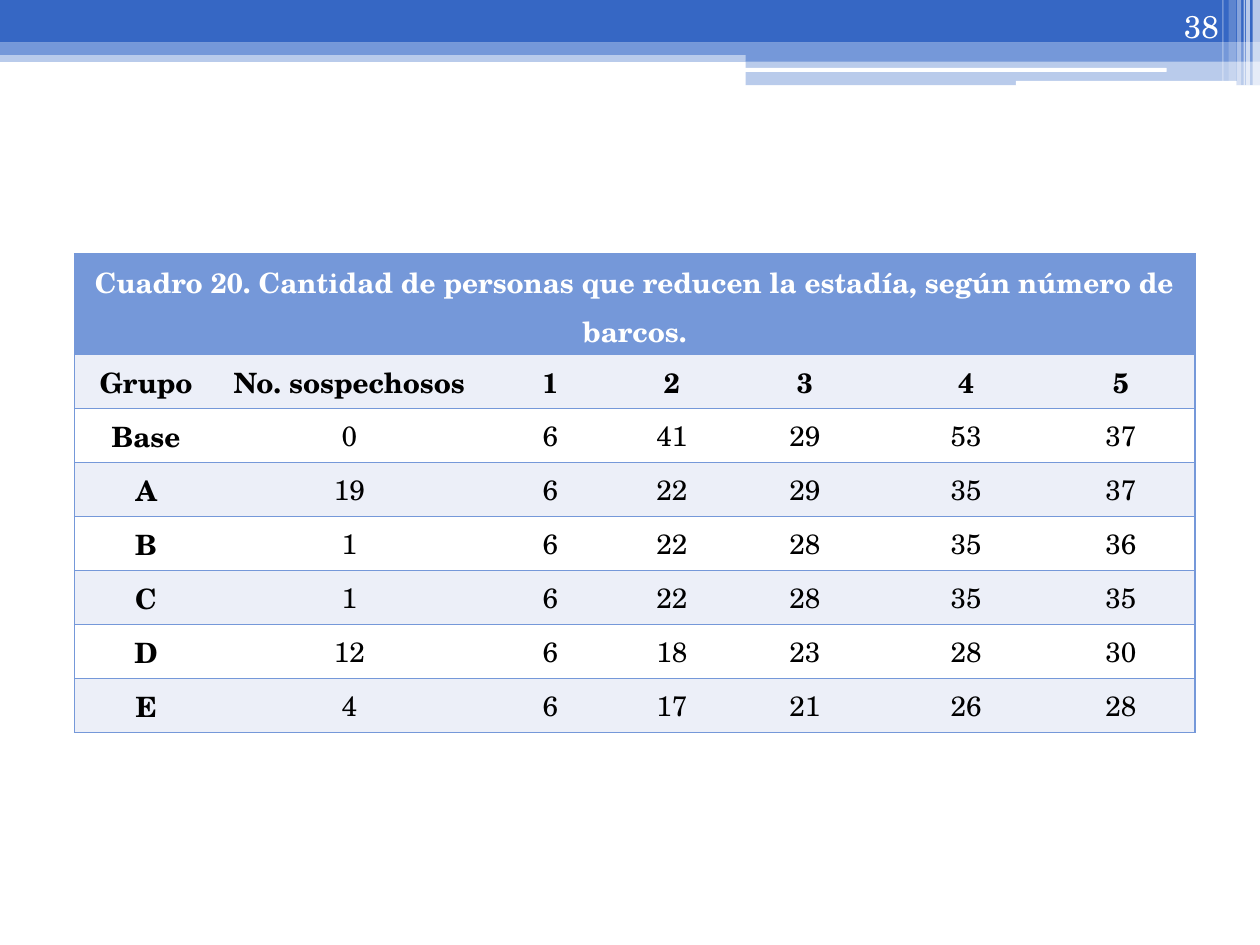
from dataclasses import dataclass

from lxml.etree import SubElement
from pptx import Presentation
from pptx.dml.color import RGBColor
from pptx.enum.shapes import MSO_SHAPE
from pptx.enum.text import MSO_ANCHOR, PP_ALIGN
from pptx.oxml import parse_xml
from pptx.oxml.ns import nsdecls, qn
from pptx.util import Cm, Pt

COLORS = {
    "deep": "3667C4",
    "blue": "7598D9",
    "band": "ECEFF8",
    "white": "FFFFFF",
    "black": "000000",
}
FONT = "TeX Gyre Schola"
TITLE = "Cuadro 20. Cantidad de personas que reducen la estadía, según número de barcos."
ROWS = [
    ("Grupo", "No. sospechosos", "1", "2", "3", "4", "5"),
    ("Base", "0", "6", "41", "29", "53", "37"),
    ("A", "19", "6", "22", "29", "35", "37"),
    ("B", "1", "6", "22", "28", "35", "36"),
    ("C", "1", "6", "22", "28", "35", "35"),
    ("D", "12", "6", "18", "23", "28", "30"),
    ("E", "4", "6", "17", "21", "26", "28"),
]
COLUMN_WIDTHS = (2.89, 5.31, 2.79, 2.11, 3.25, 3.25, 2.99)
ROW_HEIGHTS = (2.02,) + (1.09,) * len(ROWS)


@dataclass(frozen=True)
class Bar:
    left: float
    top: float
    width: float
    height: float
    color: str = "white"
    opacity: int = 100
    rounded: bool = False


BARS = [
    Bar(0, 1.02, 25.4, 0.23, "blue", 50),
    Bar(0, 0, 25.4, 0.86, "deep"),
    Bar(0, 0.86, 25.4, 0.25, "blue"),
    Bar(15.03, 0.99, 10.37, 0.25, "blue"),
    Bar(15.03, 1.22, 10.37, 0.5, "blue", 50),
    Bar(15.01, 1.37, 8.51, 0.08, rounded=True),
    Bar(20.48, 1.63, 4.45, 0.1, rounded=True),
    Bar(25.25, 0, 0.15, 1.73, opacity=65),
    Bar(25.12, 0, 0.08, 1.73, opacity=65),
    Bar(25.07, 0, 0.03, 1.73, opacity=60),
    Bar(24.94, 0, 0.08, 1.73, opacity=40),
    Bar(24.77, 0, 0.15, 1.63, opacity=20),
    Bar(24.64, 0, 0.03, 1.63, opacity=30),
]


def rgb(name: str) -> RGBColor:
    """Return a named colour."""
    return RGBColor.from_string(COLORS[name])


def draw_bar(slide, bar: Bar) -> None:
    """Draw one bar of the header."""
    kind = MSO_SHAPE.ROUNDED_RECTANGLE if bar.rounded else MSO_SHAPE.RECTANGLE
    shape = slide.shapes.add_shape(
        kind, Cm(bar.left), Cm(bar.top), Cm(bar.width), Cm(bar.height)
    )
    shape.shadow.inherit = False
    shape.line.fill.background()
    shape.fill.solid()
    shape.fill.fore_color.rgb = rgb(bar.color)
    if bar.opacity < 100:
        color = next(shape.element.spPr.iter(qn("a:srgbClr")))
        SubElement(color, qn("a:alpha"), val=str(bar.opacity * 1000))


def style_paragraph(paragraph, size: int, color: str, alignment, bold: bool) -> None:
    """Set the alignment and font of a paragraph."""
    paragraph.alignment = alignment
    paragraph.font.name = FONT
    paragraph.font.size = Pt(size)
    paragraph.font.bold = bold
    paragraph.font.color.rgb = rgb(color)


def draw_page_number(slide, number: str) -> None:
    """Write the page number in the header."""
    box = slide.shapes.add_textbox(Cm(22.71), Cm(0), Cm(2.11), Cm(1.02))
    frame = box.text_frame
    frame.word_wrap = True
    frame.vertical_anchor = MSO_ANCHOR.BOTTOM
    frame.text = number
    style_paragraph(frame.paragraphs[0], 18, "white", PP_ALIGN.RIGHT, False)


def set_borders(cell, sides: str) -> None:
    """Draw the given sides of a cell and clear the others."""
    properties = cell._tc.get_or_add_tcPr()
    solid = f'<a:solidFill><a:srgbClr val="{COLORS["blue"]}"/></a:solidFill>'
    for index, side in enumerate("LRTB"):
        fill = solid if side in sides else "<a:noFill/>"
        line = f'<a:ln{side} {nsdecls("a")} w="{Pt(0.75)}">{fill}</a:ln{side}>'
        properties.insert(index, parse_xml(line))


def style_cell(cell, text: str, fill: str, color: str, bold: bool, sides: str) -> None:
    """Fill a table cell with its text, colours and borders."""
    cell.margin_left = cell.margin_right = Cm(0.18)
    cell.margin_top = cell.margin_bottom = Cm(0)
    cell.fill.solid()
    cell.fill.fore_color.rgb = rgb(fill)
    cell.text = text
    paragraph = cell.text_frame.paragraphs[0]
    paragraph.line_spacing = 1.15
    style_paragraph(paragraph, 16, color, PP_ALIGN.CENTER, bold)
    set_borders(cell, sides)


def draw_table(slide) -> None:
    """Draw the table with its merged title row."""
    row_count, column_count = len(ROW_HEIGHTS), len(COLUMN_WIDTHS)
    table = slide.shapes.add_table(
        row_count, column_count, Cm(1.5), Cm(5.12),
        Cm(sum(COLUMN_WIDTHS)), Cm(sum(ROW_HEIGHTS)),
    ).table
    table.first_row = table.horz_banding = False
    for column, width in zip(table.columns, COLUMN_WIDTHS):
        column.width = Cm(width)
    for row, height in zip(table.rows, ROW_HEIGHTS):
        row.height = Cm(height)
    table.cell(0, 0).merge(table.cell(0, column_count - 1))
    style_cell(table.cell(0, 0), TITLE, "blue", "white", True, "LRTB")
    for row_index, values in enumerate(ROWS, start=1):
        fill = "band" if row_index % 2 else "white"
        for column_index, value in enumerate(values):
            first, last = column_index == 0, column_index == column_count - 1
            sides = "TB" + "L" * first + "R" * last
            bold = row_index == 1 or first
            cell = table.cell(row_index, column_index)
            style_cell(cell, value, fill, "black", bold, sides)


def main() -> None:
    """Build and save the slide."""
    presentation = Presentation()
    presentation.slide_width = Cm(25.4)
    presentation.slide_height = Cm(19.05)
    slide = presentation.slides.add_slide(presentation.slide_layouts[6])
    for bar in BARS:
        draw_bar(slide, bar)
    draw_page_number(slide, "38")
    draw_table(slide)
    presentation.save("out.pptx")


if __name__ == "__main__":
    main()
